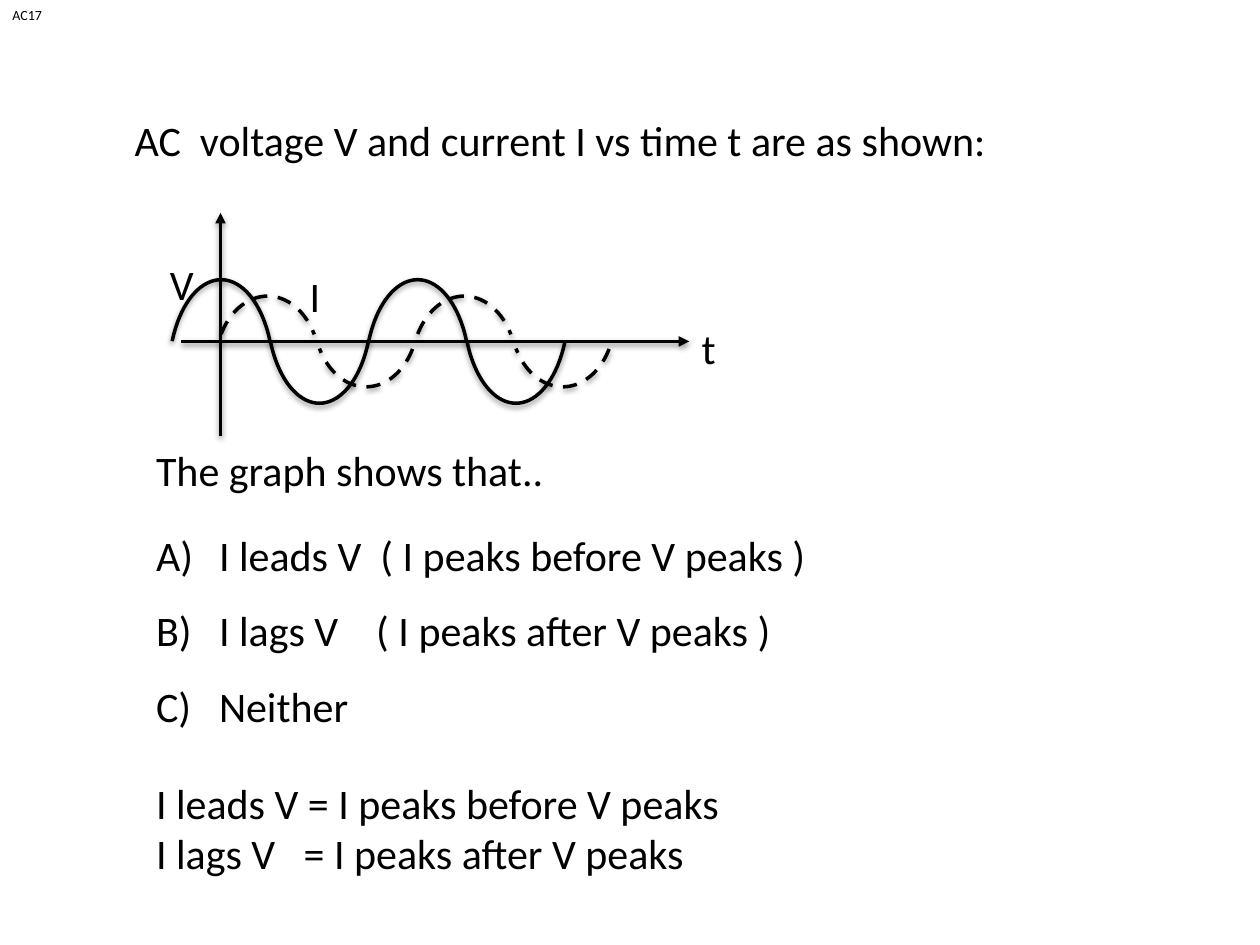
"""Build a slide asking whether an AC current leads or lags the voltage."""
from lxml import etree
from pptx import Presentation
from pptx.dml.color import RGBColor
from pptx.enum.dml import MSO_LINE
from pptx.enum.shapes import MSO_CONNECTOR, MSO_SHAPE
from pptx.enum.text import MSO_AUTO_SIZE
from pptx.oxml import parse_xml
from pptx.oxml.ns import qn
from pptx.util import Inches, Pt

ARC = MSO_SHAPE.ARC
STRAIGHT = MSO_CONNECTOR.STRAIGHT
DASH = MSO_LINE.DASH
FIT_SHAPE = MSO_AUTO_SIZE.SHAPE_TO_FIT_TEXT
BLACK = "000000"
SHADOW = (
    '<a:effectLst xmlns:a="http://schemas.openxmlformats.org/drawingml/2006/main">'
    '<a:outerShdw blurRad="40000" dist="20000" dir="5400000" rotWithShape="0">'
    '<a:srgbClr val="000000"><a:alpha val="38000"/></a:srgbClr>'
    '</a:outerShdw></a:effectLst>'
)


def draw_stroke(item, dash=None, arrow=False):
    item.line.color.rgb = RGBColor.from_string(BLACK)
    item.line.width = Pt(2)
    if dash is not None:
        item.line.dash_style = dash
    properties = item._element.spPr
    if arrow:
        etree.SubElement(properties.find(qn("a:ln")), qn("a:tailEnd"), type="triangle")
    properties.append(parse_xml(SHADOW))


def add_text(page, place, lines, size=24, wrap=False, lettered=False):
    box = page.shapes.add_textbox(*(Inches(value) for value in place))
    frame = box.text_frame
    frame.word_wrap = wrap
    frame.auto_size = FIT_SHAPE
    for index, line in enumerate(lines):
        para = frame.paragraphs[0] if index == 0 else frame.add_paragraph()
        span = para.add_run()
        span.text = line
        span.font.size = Pt(size)
        span.font.name = "Calibri"
        span.font.color.rgb = RGBColor.from_string(BLACK)
        if lettered:
            para.line_spacing = 1.5
            properties = para._p.get_or_add_pPr()
            properties.set("marL", str(Inches(0.5)))
            properties.set("indent", str(-Inches(0.5)))
            etree.SubElement(properties, qn("a:buFontTx"))
            etree.SubElement(properties, qn("a:buAutoNum"), type="alphaUcParenR")


deck = Presentation()
deck.slide_width = Inches(10)
deck.slide_height = Inches(7.5)
page = deck.slides.add_slide(deck.slide_layouts[6])

add_text(page, (0.97, 0.86, 7.09, 0.5),
         ["AC  voltage V and current I vs time t are as shown:"])

for axis in [(1.44, 2.71, 5.47, 2.71), (1.75, 3.46, 1.75, 1.69)]:
    connector = page.shapes.add_connector(STRAIGHT, *(Inches(value) for value in axis))
    draw_stroke(connector, arrow=True)

waves = [
    (1.34, 2.22, 1.69, 1.51, None),
    (1.71, 2.35, 1.96, 1.11, DASH),
]
for left, crest_top, trough_top, height, dash in waves:
    wave = page.shapes.add_group_shape()
    for half in range(4):
        is_trough = half % 2 == 1
        arc = wave.shapes.add_shape(
            ARC, Inches(left + 0.78 * half),
            Inches(trough_top if is_trough else crest_top),
            Inches(0.83), Inches(height))
        arc.adjustments[0] = 128.731
        arc.adjustments[1] = 195.516
        arc.rotation = 180 if is_trough else 0
        arc.fill.background()
        draw_stroke(arc, dash)

add_text(page, (5.47, 2.51, 0.31, 0.5), ["t"])
add_text(page, (1.25, 2, 0.39, 0.5), ["V"])
add_text(page, (2.36, 2.1, 0.34, 0.5), ["I"], wrap=True)
add_text(page, (1.14, 3.95, 5.4, 1.92),
         ["I leads V  ( I peaks before V peaks )",
          "I lags V    ( I peaks after V peaks )",
          "Neither"], lettered=True)
add_text(page, (1.14, 3.48, 3.3, 0.5), ["The graph shows that.."])
add_text(page, (1.14, 6.12, 5.4, 1.72),
         ["I leads V = I peaks before V peaks",
          "I lags V   = I peaks after V peaks"], wrap=True)
add_text(page, (0, 0, 0.44, 0.24), ["AC17"], size=8)

deck.save("out.pptx")
